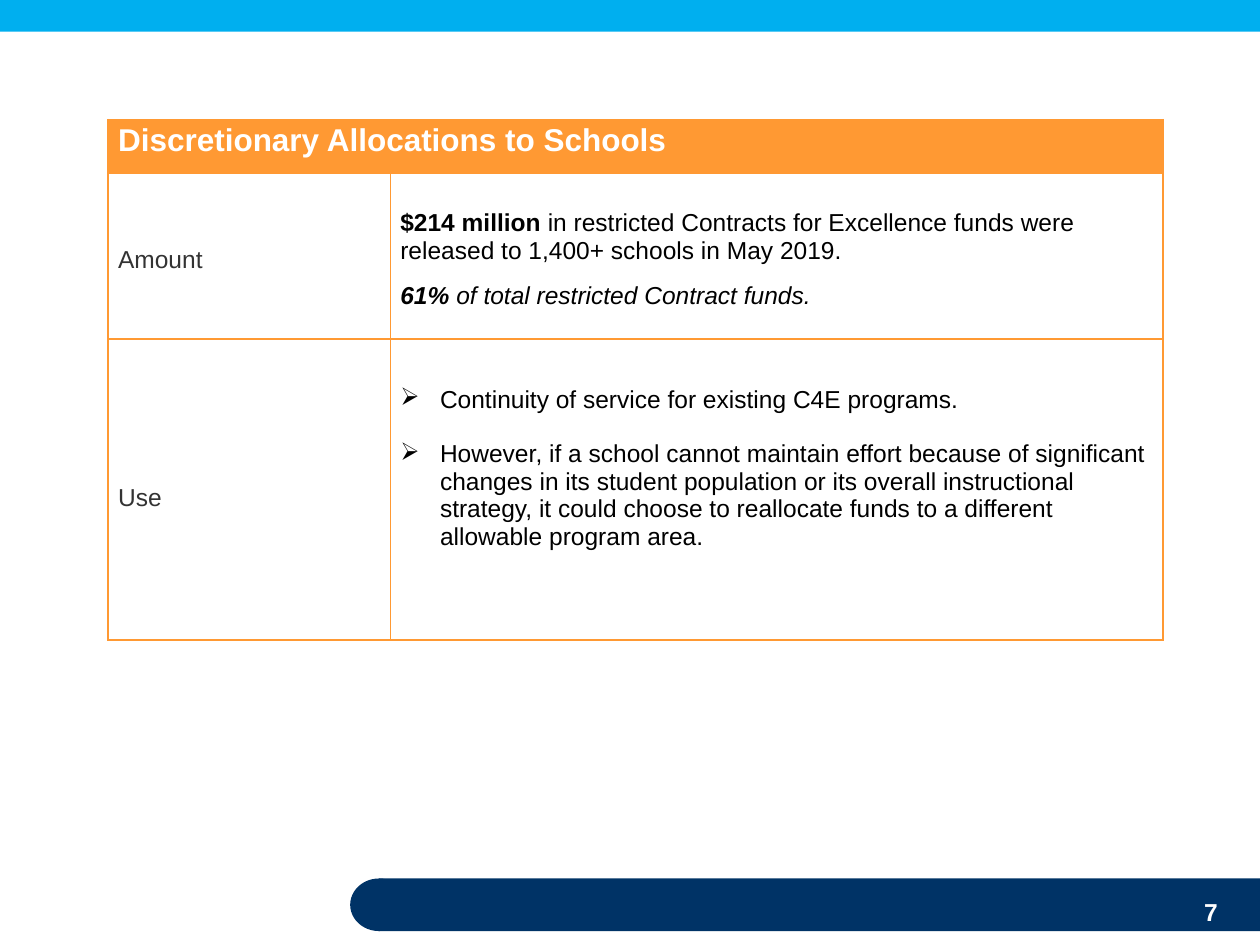
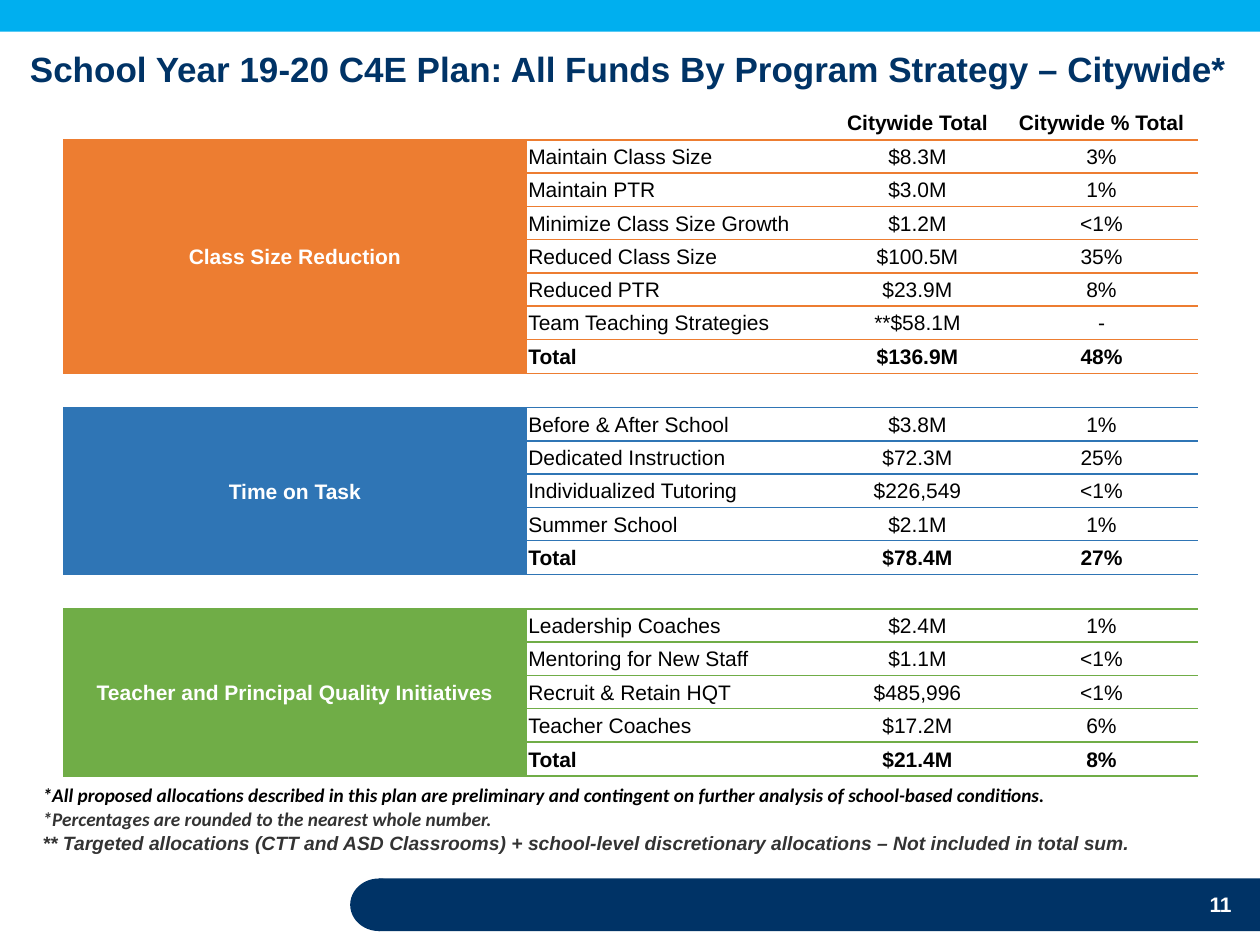
from lxml import etree
from pptx import Presentation
from pptx import util as u
from pptx.dml.color import RGBColor
from pptx.enum import shapes, text
from pptx.oxml.ns import qn

COLORS = {
    "navy": "003366", "sky": "00AFEF", "white": "FFFFFF", "black": "000000",
    "gray": "333333", "amber": "FF9933",
    "orange": "ED7D31", "blue": "2F75B5", "green": "70AD47",
}
WIDTH, HEIGHT = 25.4, 19.05
NO_STYLE = "{2D5ABB26-0587-4C30-8999-92F81FD0307C}"
LEFT, CENTER, RIGHT = text.PP_ALIGN.LEFT, text.PP_ALIGN.CENTER, text.PP_ALIGN.RIGHT
MIDDLE, TOP = text.MSO_ANCHOR.MIDDLE, text.MSO_ANCHOR.TOP

# Program strategies: name, colour, rows of (strategy, total, share)
STRATEGIES = [
    ("Class Size Reduction", "orange", [
        ("Maintain Class Size", "$8.3M", "3%"),
        ("Maintain PTR", "$3.0M", "1%"),
        ("Minimize Class Size Growth", "$1.2M", "<1%"),
        ("Reduced Class Size", "$100.5M", "35%"),
        ("Reduced PTR", "$23.9M", "8%"),
        ("Team Teaching Strategies", "**$58.1M", "-"),
        ("Total", "$136.9M", "48%")]),
    ("Time on Task", "blue", [
        ("Before & After School", "$3.8M", "1%"),
        ("Dedicated Instruction", "$72.3M", "25%"),
        ("Individualized Tutoring", "$226,549", "<1%"),
        ("Summer School", "$2.1M", "1%"),
        ("Total", "$78.4M", "27%")]),
    ("Teacher and Principal Quality Initiatives", "green", [
        ("Leadership Coaches", "$2.4M", "1%"),
        ("Mentoring for New Staff", "$1.1M", "<1%"),
        ("Recruit & Retain HQT", "$485,996", "<1%"),
        ("Teacher Coaches", "$17.2M", "6%"),
        ("Total", "$21.4M", "8%")]),
]
FOOTNOTES = [
    ("*All proposed allocations described in this plan are preliminary and contingent "
     "on further analysis of school-based conditions.", "Calibri", "black"),
    ("*Percentages are rounded to the nearest whole number.", "Calibri", "gray"),
    ("** Targeted allocations (CTT and ASD Classrooms) + school-level discretionary "
     "allocations – Not included in total sum.", "Arial", "gray"),
]


def rgb(name):
    return RGBColor.from_string(COLORS[name])


def cm_box(box):
    return [u.Cm(value) for value in box]


def add_run(paragraph, words, size, color="black", bold=False, italic=False, font="Arial"):
    run = paragraph.add_run()
    run.text = words
    run.font.name, run.font.size = font, u.Pt(size)
    run.font.bold, run.font.italic = bold, italic
    run.font.color.rgb = rgb(color)


def add_bar(slide, kind, box, color):
    shape = slide.shapes.add_shape(kind, *cm_box(box))
    shape.shadow.inherit = False
    shape.fill.solid()
    shape.fill.fore_color.rgb = rgb(color)
    shape.line.fill.background()


def add_bands(slide):
    """Top stripe and the footer band with its round left end."""
    kinds = shapes.MSO_SHAPE
    add_bar(slide, kinds.RECTANGLE, (0, 0, WIDTH, 0.64), "sky")
    top, height, left = 17.71, 1.06, 7.06
    add_bar(slide, kinds.RECTANGLE, (left + 0.58, top, WIDTH - left - 0.58, height), "navy")
    add_bar(slide, kinds.OVAL, (left, top, 1.16, height), "navy")


def set_margins(target, left=0, top=0, right=0, bottom=0):
    target.margin_left, target.margin_top = u.Cm(left), u.Cm(top)
    target.margin_right, target.margin_bottom = u.Cm(right), u.Cm(bottom)


def add_page_number(slide, number, right, top, size):
    width = 2
    frame = slide.shapes.add_textbox(*cm_box((right - width, top, width, 0.64))).text_frame
    frame.word_wrap = True
    frame.vertical_anchor = MIDDLE
    set_margins(frame)
    frame.paragraphs[0].alignment = RIGHT
    add_run(frame.paragraphs[0], str(number), size, "white", bold=True)


def add_plain_table(slide, left, top, columns, rows):
    """Table without a style, with the given column widths and row heights."""
    box = (left, top, sum(columns), sum(rows))
    frame = slide.shapes.add_table(len(rows), len(columns), *cm_box(box))
    table = frame.table
    table.first_row = table.horz_banding = False
    frame._element.find(".//" + qn("a:tableStyleId")).text = NO_STYLE
    for column, width in zip(table.columns, columns):
        column.width = u.Cm(width)
    for row, height in zip(table.rows, rows):
        row.height = u.Cm(height)
    return table


def format_cell(cell, borders="", border_color=None, fill=None):
    """Borders is a string of sides out of L, R, T, B."""
    properties = cell._tc.get_or_add_tcPr()
    for side in borders:
        line = etree.SubElement(properties, qn("a:ln" + side), w=str(u.Pt(1)))
        solid = etree.SubElement(line, qn("a:solidFill"))
        etree.SubElement(solid, qn("a:srgbClr"), val=COLORS[border_color])
    if fill:
        cell.fill.solid()
        cell.fill.fore_color.rgb = rgb(fill)
    else:
        cell.fill.background()


def add_bullet(paragraph):
    properties = paragraph._p.get_or_add_pPr()
    properties.set("marL", str(u.Cm(0.8)))
    properties.set("indent", str(-u.Cm(0.8)))
    etree.SubElement(properties, qn("a:buChar"), char="➢")


def add_allocation_table(slide, left, top):
    table = add_plain_table(slide, left, top, [5.69, 15.57], [1.09, 3.33, 6.07])
    table.cell(0, 0).merge(table.cell(0, 1))
    for cell in table.iter_cells():
        header = cell.is_merge_origin or cell.is_spanned
        format_cell(cell, "LRTB", "amber", "amber" if header else None)

    def fill_cell(row, column, offset, paragraphs, size=14, gap=0, bullets=False):
        cell = table.cell(row, column)
        cell.vertical_anchor = TOP
        set_margins(cell, left=0.2, top=offset, right=0.15)
        for index, runs in enumerate(paragraphs):
            frame = cell.text_frame
            paragraph = frame.add_paragraph() if index else frame.paragraphs[0]
            if index:
                paragraph.space_before = u.Pt(gap)
            if bullets:
                add_bullet(paragraph)
            for words, style in runs:
                add_run(paragraph, words, size, **style)

    fill_cell(0, 0, 0.06, [[("Discretionary Allocations to Schools",
                             {"color": "white", "bold": True})]], size=18)
    fill_cell(1, 0, 1.47, [[("Amount", {"color": "gray"})]])
    fill_cell(1, 1, 0.72, [
        [("$214 million ", {"bold": True}),
         ("in restricted Contracts for Excellence funds were released to "
          "1,400+ schools in May 2019.", {})],
        [("61% ", {"bold": True, "italic": True}),
         ("of total restricted Contract funds.", {"italic": True})],
    ], gap=10)
    fill_cell(2, 0, 2.94, [[("Use", {"color": "gray"})]])
    fill_cell(2, 1, 0.95, [
        [("Continuity of service for existing C4E programs.", {})],
        [("However, if a school cannot maintain effort because of significant changes in "
          "its student population or its overall instructional strategy, it could choose "
          "to reallocate funds to a different allowable program area.", {})],
    ], gap=15.5, bullets=True)


def add_title(slide, words, box):
    title = slide.shapes.title
    title.left, title.top, title.width, title.height = cm_box(box)
    frame = title.text_frame
    frame.auto_size = text.MSO_AUTO_SIZE.NONE
    frame.word_wrap = True
    frame.vertical_anchor = MIDDLE
    set_margins(frame)
    frame.paragraphs[0].alignment = CENTER
    add_run(frame.paragraphs[0], words, 20, "navy", bold=True)


def add_strategy_table(slide, left, top):
    normal, tall = 0.67, 0.69
    rows = []
    for _, _, entries in STRATEGIES:
        # A header or gap row, the strategies, then the total
        rows += [tall] + [normal] * (len(entries) - 1) + [tall]
    table = add_plain_table(slide, left, top, [9.35, 6.12, 3.51, 3.91], rows)

    def write(row, column, words, align=CENTER, color="black", bold=False):
        paragraph = table.cell(row, column).text_frame.paragraphs[0]
        paragraph.alignment = align
        add_run(paragraph, words, 12, color, bold)

    for column, heading in ((2, "Citywide Total"), (3, "Citywide % Total")):
        write(0, column, heading, bold=True)

    start = 1
    for name, color, entries in STRATEGIES:
        end = start + len(entries) - 1
        table.cell(start, 0).merge(table.cell(end, 0))
        write(start, 0, name, color="white", bold=True)
        for row, entry in enumerate(entries, start):
            for column in range(4):
                format_cell(table.cell(row, column), "TB", color, None if column else color)
            for column, words in enumerate(entry, 1):
                write(row, column, words, LEFT if column == 1 else CENTER, bold=row == end)
        start = end + 2

    for cell in table.iter_cells():
        cell.vertical_anchor = MIDDLE
        set_margins(cell, left=0.03, top=0.03, right=0.03)
        paragraph = cell.text_frame.paragraphs[0]
        if not paragraph.runs:
            # Small type keeps empty rows at their height
            etree.SubElement(paragraph._p, qn("a:endParaRPr"), sz="1200")


def add_footnotes(slide, box):
    left, top, width, pitch = box
    for index, (words, font, color) in enumerate(FOOTNOTES):
        place = cm_box((left, top + index * pitch, width, 0.74))
        frame = slide.shapes.add_textbox(*place).text_frame
        frame.word_wrap = True
        add_run(frame.paragraphs[0], words, 11, color, bold=True, italic=True, font=font)


def build_allocation_slide(presentation):
    slide = presentation.slides.add_slide(presentation.slide_layouts[6])
    add_bands(slide)
    add_allocation_table(slide, 2.18, 2.41)
    add_page_number(slide, 7, right=24.55, top=18.05, size=14)


def build_strategy_slide(presentation):
    slide = presentation.slides.add_slide(presentation.slide_layouts[5])
    add_bands(slide)
    add_title(slide, "School Year 19-20 C4E Plan: All Funds By Program Strategy – Citywide*",
              (0.23, 0.95, 24.87, 0.86))
    add_strategy_table(slide, 1.27, 2.13)
    add_footnotes(slide, (0.61, 15.67, 24.2, 0.48))
    add_page_number(slide, 11, right=24.83, top=17.91, size=12)


def main():
    presentation = Presentation()
    presentation.slide_width, presentation.slide_height = u.Cm(WIDTH), u.Cm(HEIGHT)
    build_allocation_slide(presentation)
    build_strategy_slide(presentation)
    presentation.save("out.pptx")


if __name__ == "__main__":
    main()
